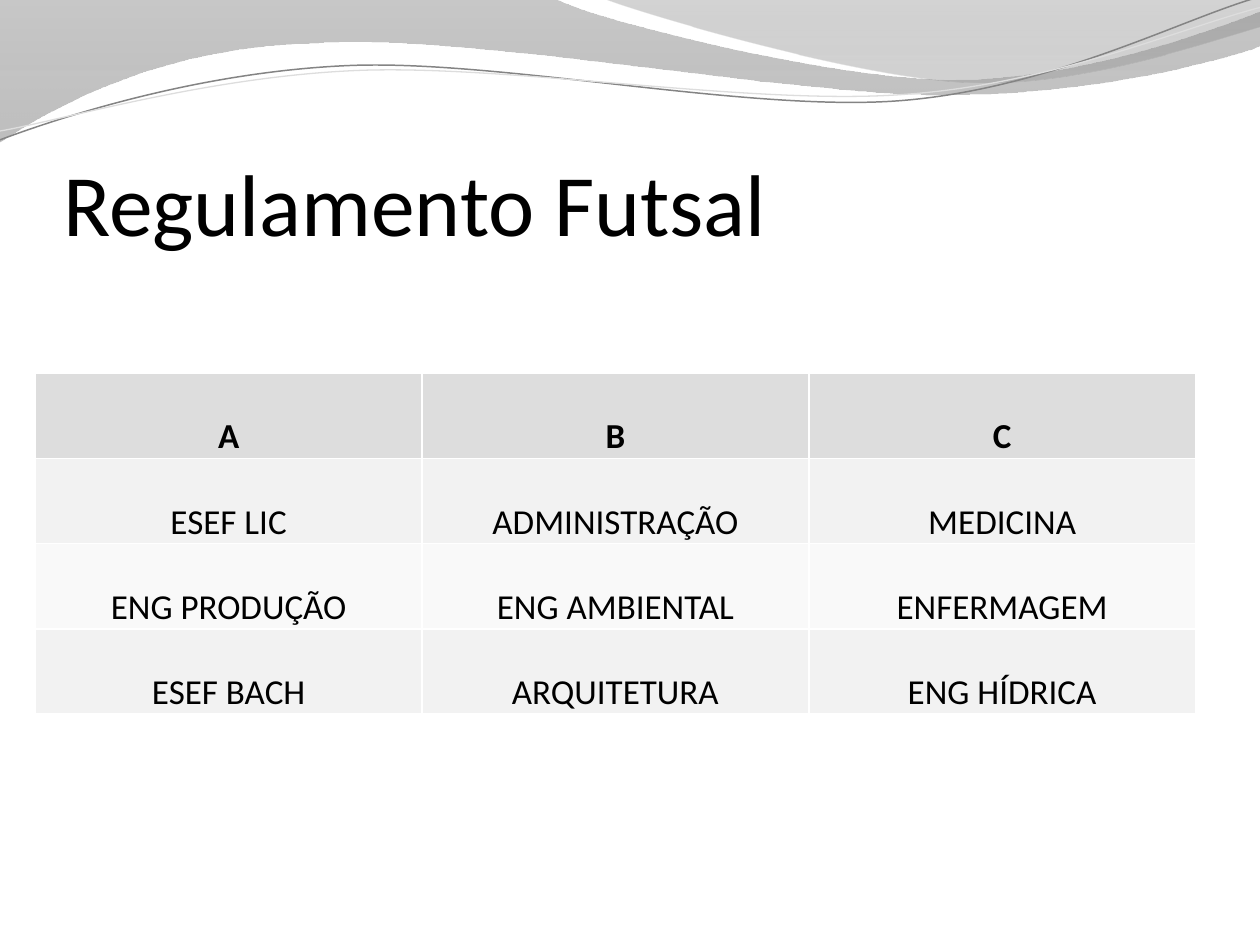
import math
import pptx
import pptx.util
import pptx.dml.color
import pptx.enum.text
import pptx.oxml
import pptx.oxml.ns

Inches, Pt = pptx.util.Inches, pptx.util.Pt
NS = pptx.oxml.ns.nsdecls("a")
TITLE = "Regulamento Futsal"
GROUPS = [
    ("A", "B", "C"),
    ("ESEF LIC", "ADMINISTRAÇÃO", "MEDICINA"),
    ("ENG PRODUÇÃO", "ENG AMBIENTAL", "ENFERMAGEM"),
    ("ESEF BACH", "ARQUITETURA", "ENG HÍDRICA"),
]
BANDS = ["DDDDDD", "F2F2F2", "F9F9F9", "F2F2F2"]
WAVES = [
    ([[(0, 0)], [(4.4, -0.01)],
      [(4.76, 0.17), (6.64, 0.63), (7.58, 0.63)],
      [(8.53, 0.63), (9.58, 0.26), (10, 0.09)], [(10.01, 0.36)],
      [(9.83, 0.44), (8.7, 0.76), (7.46, 0.75)],
      [(6.22, 0.75), (3.82, 0.28), (2.57, 0.34)],
      [(1.29, 0.36), (0.46, 0.83), (-0.01, 1.13)], [(0, 0)]],
     [(0, "848484", 45), (1, "888888", 55)]),
    ([[(4.79, -0.01)],
      [(5.09, 0.11), (6.82, 0.62), (7.69, 0.65)],
      [(8.56, 0.69), (9.61, 0.32), (10, 0.21)], [(10, 0)], [(4.79, -0.01)]],
     [(0, "6F6F6F", 30), (0.8, "9D9D9D", 45)]),
]
TILT = -2.7
CURVES = [
    ([[(0, 1.11)],
      [(0.48, 0.93), (1.58, 0.57), (2.77, 0.52)],
      [(3.95, 0.47), (5.93, 0.89), (7.13, 0.8)],
      [(8.33, 0.71), (9.38, 0.15), (9.98, -0.02)]], (4.99, 0.58), "848484", 0.85),
    ([[(0, 1.04)],
      [(0.47, 0.96), (1.64, 0.61), (2.83, 0.56)],
      [(4.03, 0.51), (5.97, 0.84), (7.17, 0.75)],
      [(8.36, 0.67), (9.41, 0.21), (10, 0.06)]], (5, 0.59), "DDDDDD", 0.75),
]


def paint(color, code):
    color.rgb = pptx.dml.color.RGBColor.from_string(code)


def outline(slide, parts, close):
    dots = [(Inches(x), Inches(y)) for part in parts for x, y in part]
    pen = slide.shapes.build_freeform(*dots[0], scale=1.0)
    pen.add_line_segments(dots[1:], close=close)
    shape = pen.convert_to_shape()
    shape.shadow.inherit = False
    lines = iter(list(shape._element.iter(pptx.oxml.ns.qn("a:lnTo"))))
    for part in parts[1:]:
        group = [next(lines) for _ in part]
        if len(group) == 3:
            bend = pptx.oxml.parse_xml(f"<a:cubicBezTo {NS}/>")
            group[0].addprevious(bend)
            for line in group:
                bend.append(line[0])
                line.getparent().remove(line)
    return shape


def wave(slide, parts, stops):
    shape = outline(slide, parts, True)
    shape.line.fill.background()
    shape.fill.gradient()
    shape.fill.gradient_angle = 270
    for stop, (pos, code, alpha) in zip(shape.fill.gradient_stops, stops):
        stop.position = pos
        paint(stop.color, code)
    tones = shape._element.spPr.iter(pptx.oxml.ns.qn("a:srgbClr"))
    for tone, (pos, code, alpha) in zip(tones, stops):
        tone.append(pptx.oxml.parse_xml(f'<a:alpha {NS} val="{alpha * 1000}"/>'))


def level(dot, mid):
    turn = math.radians(-TILT)
    x, y = dot[0] - mid[0], dot[1] - mid[1]
    return (mid[0] + x * math.cos(turn) - y * math.sin(turn),
            mid[1] + x * math.sin(turn) + y * math.cos(turn))


def curve(slide, parts, mid, code, width):
    shape = outline(slide, [[level(dot, mid) for dot in part] for part in parts], False)
    shape.rotation = TILT
    shape.fill.background()
    paint(shape.line.color, code)
    shape.line.width = Pt(width)


def style(para, size, bold=False):
    font = para.runs[0].font
    font.name, font.size, font.bold = "Calibri", Pt(size), bold
    paint(font.color, "000000")


def grid(slide):
    rows, cols = len(GROUPS), len(GROUPS[0])
    table = slide.shapes.add_table(rows, cols, Inches(0.28), Inches(2.96),
                                   Inches(9.21), Inches(2.71)).table
    for r, names in enumerate(GROUPS):
        for c, name in enumerate(names):
            cell = table.cell(r, c)
            cell.text_frame.text = name
            cell.margin_left = cell.margin_right = cell.margin_top = Inches(0.01)
            cell.margin_bottom = 0
            cell.vertical_anchor = pptx.enum.text.MSO_ANCHOR.BOTTOM
            cell.fill.solid()
            paint(cell.fill.fore_color, BANDS[r])
            para = cell.text_frame.paragraphs[0]
            para.alignment = pptx.enum.text.PP_ALIGN.CENTER
            style(para, 20, r == 0)


def head(slide):
    title = slide.shapes.title
    slide.shapes._spTree.append(title._element)
    title.left, title.top = Inches(0.5), Inches(0.77)
    title.width, title.height = Inches(9), Inches(1.25)
    frame = title.text_frame
    frame.text = TITLE
    frame.auto_size = pptx.enum.text.MSO_AUTO_SIZE.NONE
    frame.vertical_anchor = pptx.enum.text.MSO_ANCHOR.BOTTOM
    frame.margin_left = frame.margin_right = frame.margin_bottom = 0
    frame.margin_top = Inches(0.05)
    para = frame.paragraphs[0]
    para.alignment = pptx.enum.text.PP_ALIGN.LEFT
    style(para, 50)


def main():
    deck = pptx.Presentation()
    deck.slide_width, deck.slide_height = Inches(10), Inches(7.5)
    slide = deck.slides.add_slide(deck.slide_layouts[5])
    for item in WAVES:
        wave(slide, *item)
    for item in CURVES:
        curve(slide, *item)
    head(slide)
    grid(slide)
    deck.save("out.pptx")


if __name__ == "__main__":
    main()
